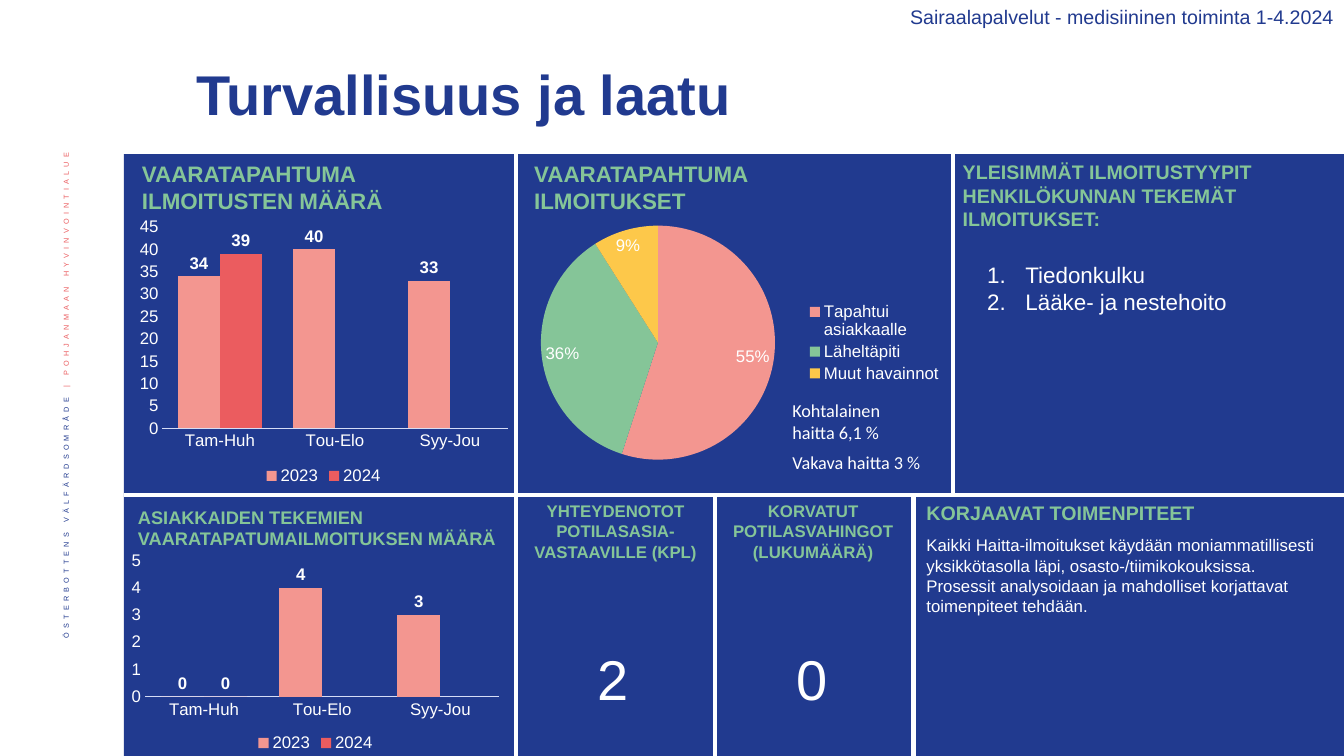
from dataclasses import dataclass

from lxml import etree
from pptx import Presentation
from pptx.chart.data import CategoryChartData
from pptx.dml.color import RGBColor
from pptx.enum.chart import XL_CHART_TYPE, XL_LABEL_POSITION, XL_LEGEND_POSITION, XL_TICK_MARK
from pptx.enum.shapes import MSO_CONNECTOR, MSO_SHAPE
from pptx.enum.text import MSO_ANCHOR, MSO_AUTO_SIZE, PP_ALIGN
from pptx.oxml.ns import qn
from pptx.util import Inches, Pt

LEFT, CENTER, RIGHT = PP_ALIGN.LEFT, PP_ALIGN.CENTER, PP_ALIGN.RIGHT
TOP, MIDDLE = MSO_ANCHOR.TOP, MSO_ANCHOR.MIDDLE
COLUMN, PIE = XL_CHART_TYPE.COLUMN_CLUSTERED, XL_CHART_TYPE.PIE
OUTSIDE, BEST_FIT = XL_LABEL_POSITION.OUTSIDE_END, XL_LABEL_POSITION.BEST_FIT
NO_TICK = XL_TICK_MARK.NONE

NAVY, WHITE, GREEN = "213A8F", "FFFFFF", "85C598"
SALMON, RED, YELLOW, AXIS = "F39690", "EB5C5F", "FDC84A", "D6DDF6"
WIDTH, HEIGHT = 13.33, 7.5
PANEL_LEFT, PANEL_TOP, ROW_SPLIT = 1.23, 1.53, 4.91


@dataclass(frozen=True)
class Label:
    text: str
    at: tuple[float, float, float, float]
    size: float
    color: str = GREEN
    bold: bool = False
    align: PP_ALIGN = LEFT


@dataclass(frozen=True)
class Divider:
    start: tuple[float, float]
    end: tuple[float, float]


@dataclass(frozen=True)
class ColumnChart:
    at: tuple[float, float, float, float]
    values_2023: tuple
    values_2024: tuple
    top: float
    step: float


LABELS = [
    Label("VAARATAPAHTUMA ILMOITUSTEN MÄÄRÄ", (1.31, 1.54, 2.7, 0.64), 16, bold=True),
    Label("VAARATAPAHTUMA ILMOITUKSET", (5.2, 1.54, 2.7, 0.64), 16, bold=True),
    Label("YLEISIMMÄT ILMOITUSTYYPIT HENKILÖKUNNAN TEKEMÄT ILMOITUKSET:",
          (9.45, 1.54, 3.88, 0.81), 14, bold=True),
    Label("ASIAKKAIDEN TEKEMIEN VAARATAPATUMAILMOITUKSEN MÄÄRÄ",
          (1.27, 4.97, 3.89, 0.54), 13, bold=True),
    Label("YHTEYDENOTOT POTILASASIA-VASTAAVILLE (KPL)",
          (5.15, 4.92, 1.91, 0.71), 12, bold=True, align=CENTER),
    Label("KORVATUT POTILASVAHINGOT (LUKUMÄÄRÄ)",
          (7.11, 4.92, 1.91, 0.71), 12, bold=True, align=CENTER),
    Label("KORJAAVAT TOIMENPITEET", (9.09, 4.92, 4.19, 0.34), 14, bold=True),
    Label("2", (5.1, 6.34, 1.97, 0.77), 40, WHITE, align=CENTER),
    Label("0", (7.07, 6.34, 1.97, 0.77), 40, WHITE, align=CENTER),
    Label("Kaikki Haitta-ilmoitukset käydään moniammatillisesti yksikkötasolla läpi, "
          "osasto-/tiimikokouksissa. Prosessit analysoidaan ja "
          "mahdolliset korjattavat toimenpiteet tehdään.",
          (9.09, 5.26, 4.19, 1.41), 12, WHITE),
    Label("Sairaalapalvelut - medisiininen toiminta 1-4.2024",
          (7.55, 0, 5.78, 0.34), 14, NAVY, align=RIGHT),
]
DIVIDERS = [
    Divider((PANEL_LEFT, ROW_SPLIT), (WIDTH, ROW_SPLIT)),
    *(Divider((x, PANEL_TOP), (x, ROW_SPLIT)) for x in (5.12, 9.45)),
    *(Divider((x, ROW_SPLIT), (x, HEIGHT)) for x in (5.12, 7.09, 9.06)),
]
COLUMN_CHARTS = [
    ColumnChart((1.31, 2.11, 3.8, 2.74), (34, 40, 33), (39, None, None), 45, 5),
    ColumnChart((1.23, 5.43, 3.8, 2.07), (0, 4, 3), (0, None, None), 5, 1),
]


def rgb(color: str) -> RGBColor:
    return RGBColor.from_string(color)


def lengths(at: tuple) -> list:
    return [Inches(value) for value in at]


def set_font(font, size: float, color: str, bold: bool = False, name: str = "Arial") -> None:
    font.size, font.bold, font.name = Pt(size), bold, name
    font.color.rgb = rgb(color)


def write(para, text: str, *, size: float, color: str, bold: bool = False,
          name: str = "Arial", align: PP_ALIGN = LEFT, before: float = 0,
          spacing: float = 1.0):
    para.alignment, para.space_before, para.line_spacing = align, Pt(before), spacing
    span = para.add_run()
    span.text = text
    set_font(span.font, size, color, bold, name)
    return span


def add_box(page, at: tuple, anchor: MSO_ANCHOR = TOP):
    frame = page.shapes.add_textbox(*lengths(at)).text_frame
    frame.word_wrap, frame.vertical_anchor = True, anchor
    return frame


def move_placeholder(page, box, at: tuple, anchor: MSO_ANCHOR):
    """Place the placeholder in front of the panel and return its text frame."""
    box.left, box.top, box.width, box.height = lengths(at)
    page.shapes._spTree.append(box._element)
    frame = box.text_frame
    frame.auto_size, frame.vertical_anchor, frame.word_wrap = MSO_AUTO_SIZE.NONE, anchor, True
    return frame


def add_panel(page) -> None:
    panel = page.shapes.add_shape(MSO_SHAPE.RECTANGLE, *lengths(
        (PANEL_LEFT, PANEL_TOP, WIDTH - PANEL_LEFT, HEIGHT - PANEL_TOP)))
    panel.shadow.inherit = False
    panel.fill.solid()
    panel.fill.fore_color.rgb = rgb(NAVY)
    panel.line.fill.background()


def add_divider(page, divider: Divider) -> None:
    line = page.shapes.add_connector(MSO_CONNECTOR.STRAIGHT, *lengths(divider.start + divider.end))
    line.line.color.rgb, line.line.width = rgb(WHITE), Pt(3)
    etree.SubElement(line._element.spPr, qn("a:effectLst"))


def add_side_text(page) -> None:
    frame = add_box(page, (0.42, 1.42, 0.52, 5.73), MIDDLE)
    frame._txBody.bodyPr.set("vert", "vert270")
    for text, color in (("ÖSTERBOTTENS VÄLFÄRDSOMRÅDE ", NAVY),
                        ("| POHJANMAAN HYVINVOINTIALUE", RED)):
        span = write(frame.paragraphs[0], text, size=9, color=color, align=RIGHT, spacing=0.9)
        span.font._element.set("baseline", "30000")
        span.font._element.set("spc", "300")


def add_chart(page, kind: XL_CHART_TYPE, at: tuple, categories: tuple, series: dict,
              legend: XL_LEGEND_POSITION, label_position: XL_LABEL_POSITION):
    data = CategoryChartData()
    data.categories = categories
    for name, values in series.items():
        data.add_series(name, values)
    chart = page.shapes.add_chart(kind, *lengths(at), data).chart
    set_font(chart.font, 10, NAVY)
    chart.has_title, chart.has_legend = False, True
    chart.legend.position, chart.legend.include_in_layout = legend, False
    set_font(chart.legend.font, 12, WHITE)
    for item in chart.plots[0].series:
        labels = item.data_labels
        labels.show_value, labels.show_percentage = kind == COLUMN, kind == PIE
        labels.position = label_position
        set_font(labels.font, 12, WHITE, kind == COLUMN)
    return chart


def add_column_chart(page, column: ColumnChart) -> None:
    chart = add_chart(page, COLUMN, column.at, ("Tam-Huh", "Tou-Elo", "Syy-Jou"),
                      {"2023": column.values_2023, "2024": column.values_2024},
                      XL_LEGEND_POSITION.BOTTOM, OUTSIDE)
    plot = chart.plots[0]
    plot.gap_width, plot.overlap, plot.vary_by_categories = 75, 0, False
    for item, color in zip(plot.series, (SALMON, RED)):
        item.format.fill.solid()
        item.format.fill.fore_color.rgb = rgb(color)
    for axis in (chart.category_axis, chart.value_axis):
        axis.major_tick_mark = axis.minor_tick_mark = NO_TICK
        axis.has_major_gridlines = False
        set_font(axis.tick_labels.font, 12, WHITE)
    chart.category_axis.format.line.color.rgb = rgb(AXIS)
    chart.category_axis.format.line.width = Pt(0.75)
    scale = chart.value_axis
    scale.minimum_scale, scale.maximum_scale, scale.major_unit = 0, column.top, column.step
    scale.format.line.fill.background()


def add_pie_chart(page) -> None:
    chart = add_chart(page, PIE, (5.15, 1.98, 4.3, 2.84),
                      ("Tapahtui asiakkaalle", "Läheltäpiti", "Muut havainnot"),
                      {"Series 1": (55, 36, 9)}, XL_LEGEND_POSITION.RIGHT, BEST_FIT)
    for index, color in enumerate((SALMON, GREEN, YELLOW)):
        fill = chart.plots[0].series[0].points[index].format.fill
        fill.solid()
        fill.fore_color.rgb = rgb(color)
    area = chart._chartSpace.chart.plotArea
    for old in area.findall(qn("c:layout")):
        area.remove(old)
    layout = etree.Element(qn("c:layout"))
    manual = etree.SubElement(layout, qn("c:manualLayout"))
    for tag, value in (("layoutTarget", "inner"), ("xMode", "edge"), ("yMode", "edge"),
                       ("x", "0.05"), ("y", "0.08"), ("w", "0.54"), ("h", "0.84")):
        etree.SubElement(manual, qn(f"c:{tag}")).set("val", value)
    area.insert(0, layout)


def add_harm_note(page) -> None:
    frame = add_box(page, (7.76, 3.91, 1.69, 0.84))
    for index, text in enumerate(("Kohtalainen", "haitta 6,1 %", "Vakava haitta 3 %")):
        para = frame.add_paragraph() if index else frame.paragraphs[0]
        write(para, text, size=13, color=WHITE, name="Calibri", before=6 if index == 2 else 0)


def fill_list(frame) -> None:
    for index, text in enumerate(("Tiedonkulku", "Lääke- ja nestehoito")):
        para = frame.add_paragraph() if index else frame.paragraphs[0]
        properties = para._p.get_or_add_pPr()
        properties.set("marL", str(Inches(0.38)))
        properties.set("indent", str(-Inches(0.38)))
        etree.SubElement(properties, qn("a:buFont")).set("typeface", "+mj-lt")
        etree.SubElement(properties, qn("a:buAutoNum")).set("type", "arabicPeriod")
        write(para, text, size=16, color=WHITE)


def main() -> None:
    deck = Presentation()
    deck.slide_width, deck.slide_height = Inches(WIDTH), Inches(HEIGHT)
    page = deck.slides.add_slide(deck.slide_layouts[1])
    title, body = page.placeholders
    add_side_text(page)
    add_panel(page)
    for divider in DIVIDERS:
        add_divider(page, divider)
    heading = move_placeholder(page, title, (1.85, 0.47, 9.98, 0.99), MIDDLE)
    write(heading.paragraphs[0], "Turvallisuus ja laatu", size=40, color=NAVY, bold=True,
          spacing=0.9)
    for column in COLUMN_CHARTS:
        add_column_chart(page, column)
    add_pie_chart(page)
    for label in LABELS:
        write(add_box(page, label.at).paragraphs[0], label.text, size=label.size,
              color=label.color, bold=label.bold, align=label.align)
    add_harm_note(page)
    fill_list(move_placeholder(page, body, (9.69, 2.54, 2.79, 0.91), TOP))
    deck.save("out.pptx")


if __name__ == "__main__":
    main()
